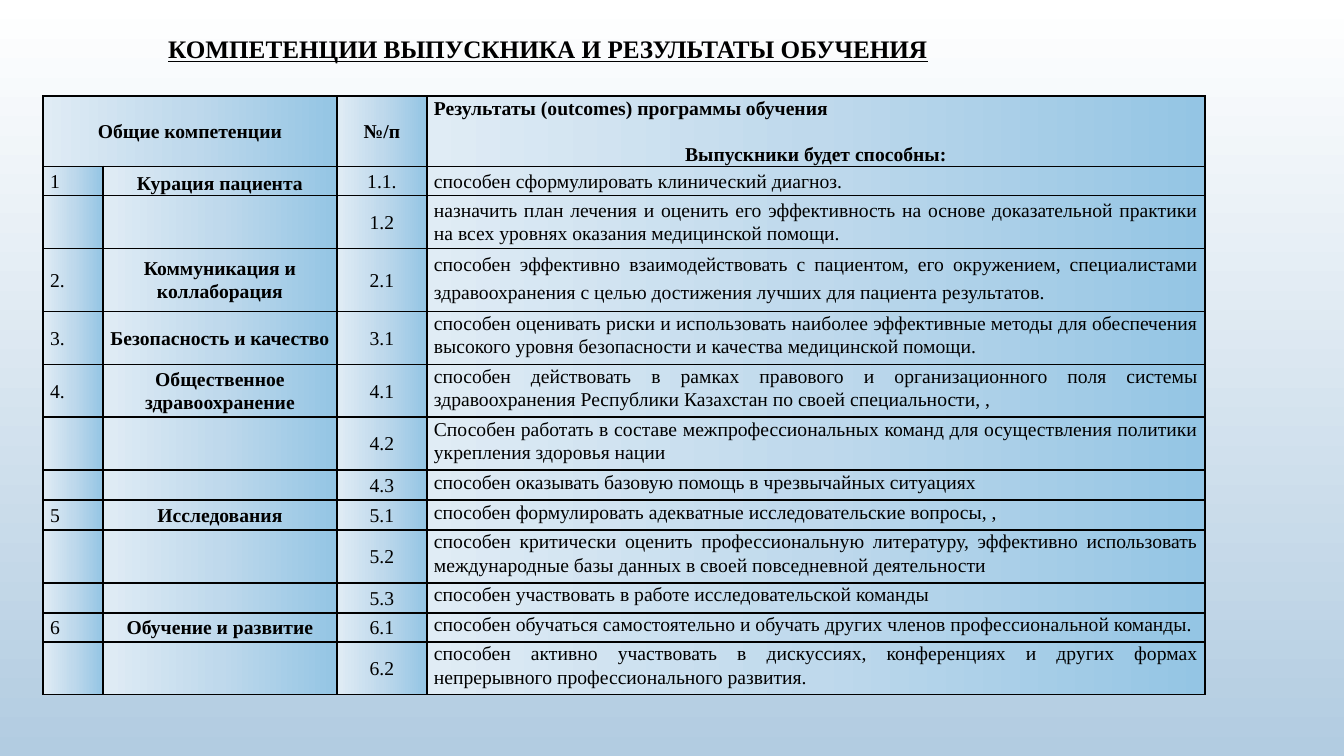
import dataclasses

import lxml.etree
import pptx
import pptx.dml.color
import pptx.enum.text
import pptx.oxml.ns
import pptx.util

ALIGN = pptx.enum.text.PP_ALIGN
ANCHOR = pptx.enum.text.MSO_ANCHOR
EMU_PER_PX = 914400 / 100.8


@dataclasses.dataclass(frozen=True)
class Theme:
    font: str = "Times New Roman"
    ink: str = "000000"
    title_size: int = 18
    table_size: int = 14
    border_width: int = 1
    page_stops: tuple = ((0, "FFFFFF"), (100, "B2CCE1"))
    cell_stops: tuple = ((0, "94C5E4"), (50, "BFD9EC"), (100, "E0ECF5"))


THEME = Theme()
TITLE = "КОМПЕТЕНЦИИ ВЫПУСКНИКА И РЕЗУЛЬТАТЫ ОБУЧЕНИЯ"
COLUMN_WIDTHS = (60, 234, 90, 778)
HEADER_HEIGHT = 70
# Row height, number, competence, outcome code, outcome
ROWS = (
    (29, "1", "Курация пациента", "1.1.", "способен сформулировать клинический диагноз."),
    (53, "", "", "1.2", "назначить план лечения и оценить его эффективность на основе "
     "доказательной практики на всех уровнях оказания медицинской помощи."),
    (63, "2.", "Коммуникация и коллаборация", "2.1",
     "способен эффективно взаимодействовать с пациентом, его окружением, специалистами "
     "здравоохранения с целью достижения лучших для пациента результатов."),
    (53, "3.", "Безопасность и качество", "3.1",
     "способен оценивать риски и использовать наиболее эффективные методы для обеспечения "
     "высокого уровня безопасности и качества медицинской помощи."),
    (53, "4.", "Общественное здравоохранение", "4.1",
     "способен действовать в рамках правового и организационного поля системы "
     "здравоохранения Республики Казахстан по своей специальности, ,"),
    (53, "", "", "4.2", "Способен работать в составе межпрофессиональных команд для "
     "осуществления политики укрепления здоровья нации"),
    (30, "", "", "4.3", "способен оказывать базовую помощь в чрезвычайных ситуациях"),
    (30, "5", "Исследования", "5.1",
     "способен формулировать адекватные исследовательские вопросы, ,"),
    (53, "", "", "5.2", "способен критически оценить профессиональную литературу, эффективно "
     "использовать международные базы данных в своей повседневной деятельности"),
    (30, "", "", "5.3", "способен участвовать в работе исследовательской команды"),
    (29, "6", "Обучение и развитие", "6.1",
     "способен обучаться самостоятельно и обучать других членов профессиональной команды."),
    (53, "", "", "6.2", "способен активно участвовать в дискуссиях, конференциях и других "
     "формах непрерывного профессионального развития."),
)


def px(length):
    return pptx.util.Emu(round(length * EMU_PER_PX))


def add_element(parent, tag, **attributes):
    return lxml.etree.SubElement(parent, pptx.oxml.ns.qn(tag), **attributes)


def set_gradient(fill, owner, stops, angle):
    """Give fill, whose XML lies inside owner, the (percent, colour) stops."""
    fill.gradient()
    fill.gradient_angle = angle
    stop_list = next(owner.iter(pptx.oxml.ns.qn("a:gsLst")))
    for old_stop in list(stop_list):
        stop_list.remove(old_stop)
    for percent, colour in stops:
        stop = add_element(stop_list, "a:gs", pos=str(percent * 1000))
        add_element(stop, "a:srgbClr", val=colour)


def write_text(para, text, size=THEME.table_size, align=ALIGN.LEFT, bold=False,
               underline=False, line_spacing=1.07, space_before=0):
    para.alignment = align
    para.line_spacing = line_spacing
    para.space_before = pptx.util.Pt(space_before)
    if not text:
        add_element(para._p, "a:endParaRPr", sz=str(size * 100))
        return
    span = para.add_run()
    span.text = text
    span.font.name = THEME.font
    span.font.size = pptx.util.Pt(size)
    span.font.bold = bold
    span.font.underline = underline
    span.font.color.rgb = pptx.dml.color.RGBColor.from_string(THEME.ink)


def format_cell(cell, anchor=ANCHOR.MIDDLE):
    cell.margin_left = cell.margin_right = px(7)
    cell.margin_top = cell.margin_bottom = 0
    cell.vertical_anchor = anchor
    properties = cell._tc.get_or_add_tcPr()
    for side in ("a:lnL", "a:lnR", "a:lnT", "a:lnB"):
        line = add_element(properties, side, w=str(pptx.util.Pt(THEME.border_width)))
        add_element(add_element(line, "a:solidFill"), "a:srgbClr", val=THEME.ink)
    set_gradient(cell.fill, properties, THEME.cell_stops, 180)


def fill_header(table):
    for column in range(len(COLUMN_WIDTHS)):
        format_cell(table.cell(0, column))
    table.cell(0, 0).merge(table.cell(0, 1))
    for column, text in ((0, "Общие компетенции"), (2, "№/п")):
        write_text(table.cell(0, column).text_frame.paragraphs[0], text,
                   align=ALIGN.CENTER, bold=True)
    frame = table.cell(0, 3).text_frame
    write_text(frame.paragraphs[0], "Результаты (outcomes) программы обучения", bold=True)
    write_text(frame.add_paragraph(), "Выпускники будет способны:",
               align=ALIGN.CENTER, bold=True, space_before=17)


def fill_rows(table):
    aligns = (ALIGN.LEFT, ALIGN.CENTER, ALIGN.CENTER, ALIGN.JUSTIFY)
    loose_cells = {(1, 1), (3, 3)}
    for row, (_, *texts) in enumerate(ROWS, start=1):
        for column, (text, align) in enumerate(zip(texts, aligns)):
            cell = table.cell(row, column)
            top = column == 3 and row > 2
            format_cell(cell, ANCHOR.TOP if top else ANCHOR.MIDDLE)
            write_text(cell.text_frame.paragraphs[0], text, align=align, bold=column == 1,
                       line_spacing=1.28 if (row, column) in loose_cells else 1.07)


def add_competence_table(page):
    heights = (HEADER_HEIGHT, *(row[0] for row in ROWS))
    table = page.shapes.add_table(len(heights), len(COLUMN_WIDTHS), px(43), px(96),
                                  px(sum(COLUMN_WIDTHS)), px(sum(heights))).table
    table.first_row = table.horz_banding = False
    for column, width in zip(table.columns, COLUMN_WIDTHS):
        column.width = px(width)
    for row, height in zip(table.rows, heights):
        row.height = px(height)
    fill_header(table)
    fill_rows(table)


def place_title(page):
    box = page.shapes.title
    box.left, box.top, box.width, box.height = px(74), px(28), px(948), px(41)
    frame = box.text_frame
    frame.word_wrap = True
    frame.auto_size = pptx.enum.text.MSO_AUTO_SIZE.NONE
    frame.vertical_anchor = ANCHOR.MIDDLE
    write_text(frame.paragraphs[0], TITLE, size=THEME.title_size, align=ALIGN.CENTER,
               bold=True, underline=True, line_spacing=1.0)


def main():
    deck = pptx.Presentation()
    deck.slide_width, deck.slide_height = px(1344), px(756)
    page = deck.slides.add_slide(deck.slide_layouts[5])
    set_gradient(page.background.fill, page._element, THEME.page_stops, 270)
    add_competence_table(page)
    place_title(page)
    deck.save("out.pptx")


if __name__ == "__main__":
    main()
